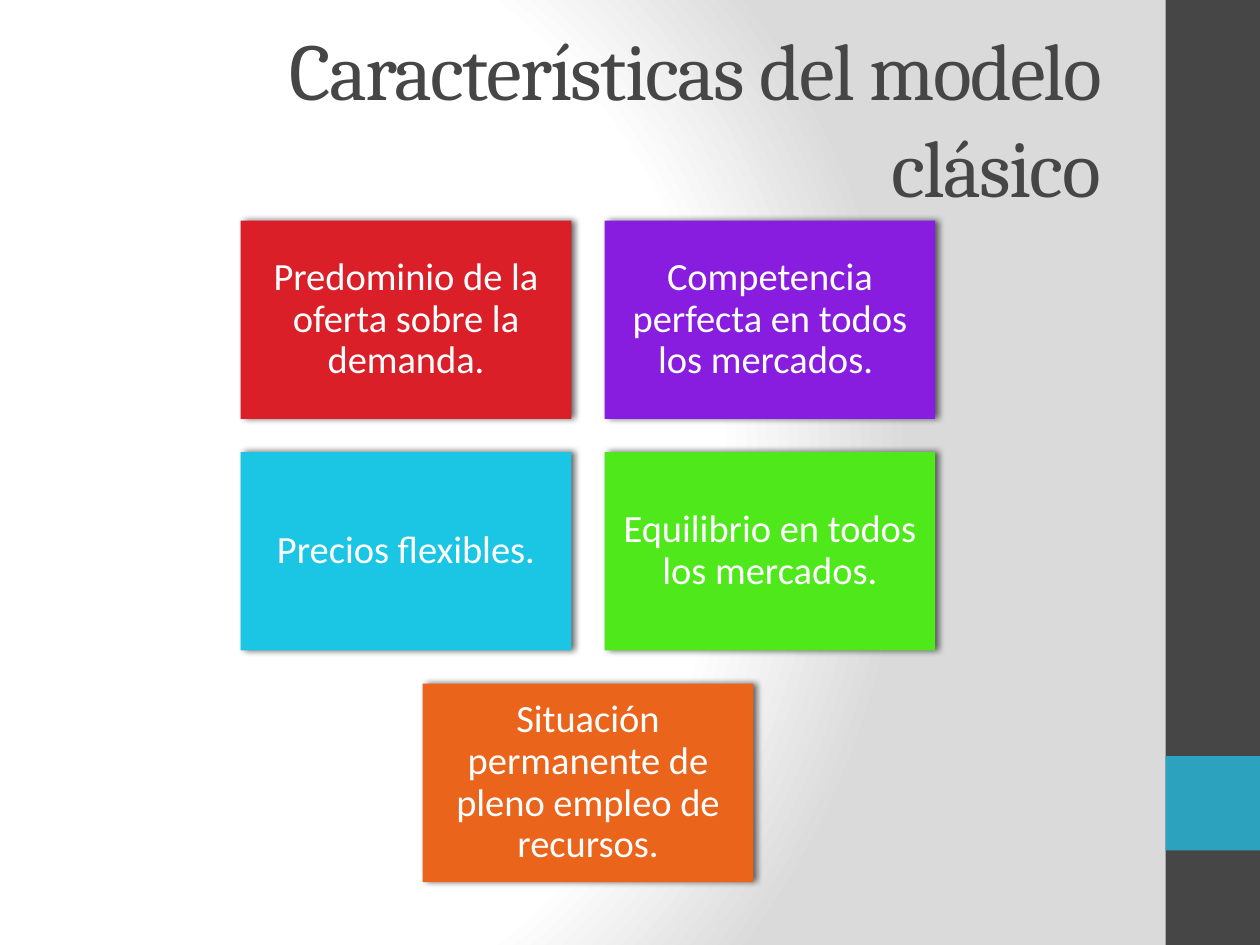
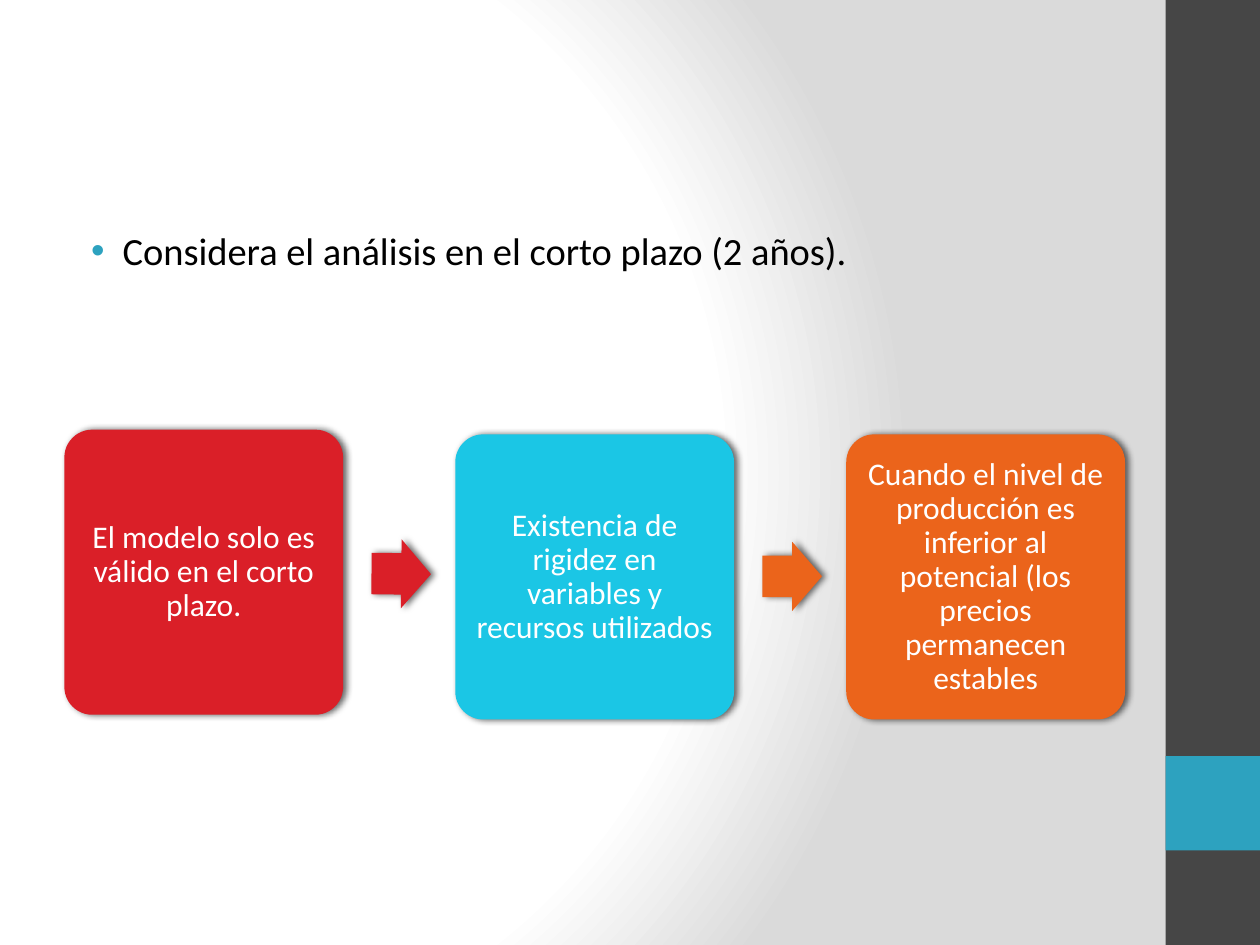
from pptx import Presentation
from pptx.dml.color import RGBColor
from pptx.enum.shapes import MSO_SHAPE as Shape
from pptx.enum.text import MSO_ANCHOR as Anchor, PP_ALIGN as Align
from pptx.oxml import parse_xml
from pptx.oxml.ns import nsdecls
from pptx.util import Pt

# Content
TITLE = "Características del modelo clásico"
FEATURES = [
    ("Predominio de la oferta sobre la demanda.", "DA1F28"),
    ("Competencia perfecta en todos los mercados. ", "881DE0"),
    ("Precios flexibles.", "1BC6E5"),
    ("Equilibrio en todos los mercados.", "4EE81B"),
    ("Situación permanente de pleno empleo de recursos.", "EB641B"),
]
BULLET = "Considera el análisis en el corto plazo (2 años)."
STEPS = [  # text, colour, top
    ("El modelo solo es válido en el corto plazo.", "DA1F28", 245.5),
    ("Existencia de rigidez en variables y recursos utilizados", "1BC6E5", 248.2),
    ("Cuando el nivel de producción es inferior al potencial "
     "(los precios permanecen estables", "EB641B", 248.2),
]
ARROWS = [("DA1F28", 308.2, 0.7), ("EB641B", 309.6, 0)]  # colour, top, rotation

# Shared style
WIDTH, HEIGHT = 720, 540
DARK, ACCENT, WHITE, BLACK = "464646", "2DA2BF", "FFFFFF", "000000"
HEADING_FONT, BODY_FONT = "Cambria", "Calibri"
BAND_LEFT, BAND_WIDTH = 666, 54
TEXT_LEFT, TEXT_WIDTH = 36, 600

BACKGROUND = f"""<p:bg {nsdecls("p", "a")}><p:bgPr><a:gradFill rotWithShape="1"><a:gsLst>
<a:gs pos="0"><a:srgbClr val="FFFFFF"/></a:gs>
<a:gs pos="75000"><a:srgbClr val="FFFFFF"/></a:gs>
<a:gs pos="100000"><a:srgbClr val="DADADA"/></a:gs></a:gsLst>
<a:path path="circle"><a:fillToRect l="20000" t="50000" r="100000" b="50000"/></a:path>
</a:gradFill><a:effectLst/></p:bgPr></p:bg>"""

SHADOW = f"""<a:effectLst {nsdecls("a")}><a:outerShdw blurRad="50800" dist="25400" dir="0"
rotWithShape="0"><a:srgbClr val="000000"><a:alpha val="60000"/></a:srgbClr>
</a:outerShdw></a:effectLst>"""


def colour(code):
    return RGBColor.from_string(code)


def add_block(page, kind, place, fill, shadow=True, adjust=()):
    box = page.shapes.add_shape(kind, *[Pt(length) for length in place])
    box.fill.solid()
    box.fill.fore_color.rgb = colour(fill)
    box.line.fill.background()
    box.shadow.inherit = False
    if shadow:
        properties = box.element.spPr
        properties.replace(properties.find("{*}effectLst"), parse_xml(SHADOW))
    for index, value in enumerate(adjust):
        box.adjustments[index] = value
    return box


def write(box, text, size, ink, font=BODY_FONT, align=Align.CENTER,
          anchor=Anchor.MIDDLE, spacing=None, inset=None):
    frame = box.text_frame
    frame.word_wrap = True
    frame.vertical_anchor = anchor
    if inset is not None:
        frame.margin_left = frame.margin_right = Pt(inset)
        frame.margin_top = frame.margin_bottom = Pt(inset)
    para = frame.paragraphs[0]
    para.alignment = align
    if spacing:
        para.line_spacing = spacing
    span = para.add_run()
    span.text = text
    span.font.name, span.font.size = font, Pt(size)
    span.font.color.rgb = colour(ink)
    return para, span


def add_text_box(page, top, height):
    return page.shapes.add_textbox(Pt(TEXT_LEFT), Pt(top), Pt(TEXT_WIDTH), Pt(height))


def add_page(deck):
    page = deck.slides.add_slide(deck.slide_layouts[6])
    page.element.cSld.insert(0, parse_xml(BACKGROUND))
    # Side band with its accent square
    for top, height, fill in ((0, HEIGHT, DARK), (432, BAND_WIDTH, ACCENT)):
        add_block(page, Shape.RECTANGLE, (BAND_LEFT, top, BAND_WIDTH, height), fill, shadow=False)
    return page


def build_features(deck):
    page = add_page(deck)
    _, span = write(add_text_box(page, 21.6, 90), TITLE, 46, DARK, HEADING_FONT, Align.RIGHT)
    span.font._element.set("spc", "-100")

    # Rows of two cards, each row centred in the text area
    width, height, gap, columns = 189, 113.4, 18.9, 2
    for first in range(0, len(FEATURES), columns):
        row = FEATURES[first:first + columns]
        row_width = len(row) * (width + gap) - gap
        left = TEXT_LEFT + (TEXT_WIDTH - row_width) / 2
        top = 126 + first // columns * (height + gap)
        for column, (text, fill) in enumerate(row):
            place = (left + column * (width + gap), top, width, height)
            card = add_block(page, Shape.RECTANGLE, place, fill)
            write(card, text, 22, WHITE, spacing=0.9, inset=6.6)


def build_process(deck):
    page = add_page(deck)
    para, _ = write(add_text_box(page, 126, 378), BULLET, 22, BLACK,
                    align=Align.LEFT, anchor=Anchor.TOP)
    # Bullet with a hanging indent
    properties = para._p.get_or_add_pPr()
    properties.set("marL", str(Pt(27)))
    properties.set("indent", str(Pt(-18)))
    for part in (f'<a:buClr {nsdecls("a")}><a:srgbClr val="{ACCENT}"/></a:buClr>',
                 f'<a:buFont {nsdecls("a")} typeface="Arial"/>',
                 f'<a:buChar {nsdecls("a")} char="•"/>'):
        properties.append(parse_xml(part))

    # Steps and the arrows between them
    pitch = 223.4
    for index, (text, fill, top) in enumerate(STEPS):
        place = (36.8 + index * pitch, top, 159.3, 162.9)
        step = add_block(page, Shape.ROUNDED_RECTANGLE, place, fill, adjust=[0.1])
        write(step, text, 18, WHITE, spacing=0.9, inset=5.2)
    for index, (fill, top, rotation) in enumerate(ARROWS):
        place = (212.3 + index * pitch, top, 34, 39.5)
        arrow = add_block(page, Shape.RIGHT_ARROW, place, fill, adjust=[0.6, 0.5])
        arrow.rotation = rotation


def main():
    deck = Presentation()
    deck.slide_width, deck.slide_height = Pt(WIDTH), Pt(HEIGHT)
    build_features(deck)
    build_process(deck)
    deck.save("out.pptx")


if __name__ == "__main__":
    main()
